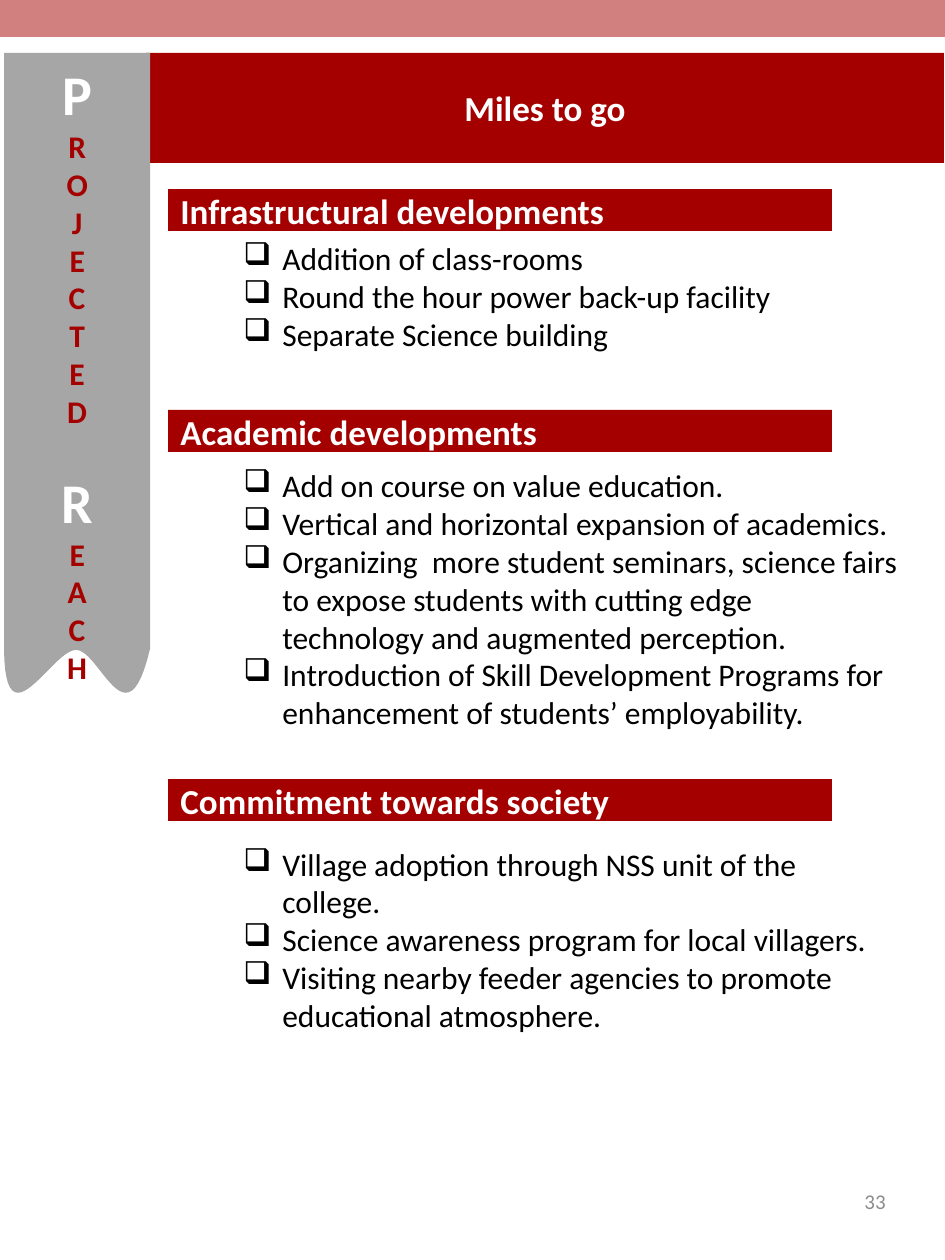
from dataclasses import dataclass
from pptx import Presentation
from pptx.dml.color import RGBColor
from pptx.enum.shapes import MSO_SHAPE as Shape
from pptx.enum.text import MSO_ANCHOR as Anchor, MSO_AUTO_SIZE as Fit, PP_ALIGN as Align
from pptx.oxml.ns import qn
from pptx.util import Emu, Pt
from lxml.etree import SubElement


@dataclass(frozen=True)
class Theme:
    font: str = "Calibri"
    red: str = "A40000"
    gray: str = "A6A6A6"
    white: str = "FFFFFF"
    black: str = "000000"
    faint: str = "8C8C8C"
    cap: int = 32
    head: int = 20
    body: int = 18
    note: int = 12


def px(n):
    return Emu(round(n * 914400 / 126))


def curve(a, b, c, d, steps=24):
    for i in range(1, steps + 1):
        t = i / steps
        u = 1 - t
        yield tuple(u**3 * p + 3 * u * u * t * q + 3 * u * t * t * r + t**3 * s
                    for p, q, r, s in zip(a, b, c, d))


def write(par, text, size, color, bold=False, align=None, font=Theme.font):
    if align is not None:
        par.alignment = align
    run = par.add_run()
    run.text = text
    run.font.name = font
    run.font.size = Pt(size)
    run.font.bold = bold
    run.font.color.rgb = RGBColor.from_string(color)


class Deck:
    def __init__(self, theme, wide, high):
        self.theme = theme
        self.file = Presentation()
        self.file.slide_width, self.file.slide_height = px(wide), px(high)
        self.slide = self.file.slides.add_slide(self.file.slide_layouts[5])

    def paint(self, shape, color, alpha=None):
        shape.fill.solid()
        shape.fill.fore_color.rgb = RGBColor.from_string(color)
        shape.line.fill.background()
        if alpha is not None:
            tint = shape.fill._xPr.find(".//" + qn("a:srgbClr"))
            SubElement(tint, qn("a:alpha")).set("val", str(alpha * 1000))

    def title(self, text, *box):
        head = self.slide.shapes.title
        head.left, head.top, head.width, head.height = map(px, box)
        self.paint(head, self.theme.red)
        frame = head.text_frame
        frame.auto_size = Fit.NONE
        frame.vertical_anchor = Anchor.MIDDLE
        write(frame.paragraphs[0], text, self.theme.head, self.theme.white,
              bold=True, align=Align.CENTER)

    def bar(self, *box, color, alpha=None, text=None):
        bar = self.slide.shapes.add_shape(Shape.RECTANGLE, *map(px, box))
        bar.shadow.inherit = False
        self.paint(bar, color, alpha)
        if text:
            bar.text_frame.vertical_anchor = Anchor.MIDDLE
            write(bar.text_frame.paragraphs[0], text, self.theme.head,
                  self.theme.white, bold=True, align=Align.LEFT)

    def ribbon(self, words, left, top, right, tail):
        mid = (76, tail + 1)
        edge = [(right, top), (right, tail),
                *curve((right, tail), (127, 747), (100, 650), mid),
                *curve(mid, (52, 650), (5, 747), (left, tail))]
        pen = self.slide.shapes.build_freeform(px(left), px(top))
        pen.add_line_segments([(px(x), px(y)) for x, y in edge])
        shape = pen.convert_to_shape()
        shape.shadow.inherit = False
        self.paint(shape, self.theme.gray)
        frame = shape.text_frame
        frame.vertical_anchor = Anchor.MIDDLE
        frame._txBody.bodyPr.set("vert", "wordArtVert")
        par = frame.paragraphs[0]
        for word in words:
            write(par, word[0], self.theme.cap, self.theme.white,
                  bold=True, align=Align.CENTER)
            write(par, word[1:], self.theme.body, self.theme.red, bold=True)

    def frame(self, *box):
        frame = self.slide.shapes.add_textbox(*map(px, box)).text_frame
        frame.word_wrap = True
        return frame

    def bullets(self, groups, *box, gap):
        frame = self.frame(*box)
        par = frame.paragraphs[0]
        for g, group in enumerate(groups):
            for i, text in enumerate(group):
                if g or i:
                    par = frame.add_paragraph()
                par.level = 1
                props = par._p.get_or_add_pPr()
                props.set("marL", str(px(102)))
                props.set("indent", str(-px(39)))
                SubElement(props, qn("a:buChar")).set("char", "❑")
                if g and not i:
                    par.space_before = Pt(gap)
                write(par, text, self.theme.body, self.theme.black)

    def number(self, text, *box):
        frame = self.frame(*box)
        frame.vertical_anchor = Anchor.MIDDLE
        write(frame.paragraphs[0], text, self.theme.note, self.theme.faint,
              align=Align.RIGHT)


PLANS = [
    ("Infrastructural developments", 189, [
        "Addition of class-rooms",
        "Round the hour power back-up facility",
        "Separate Science building"]),
    ("Academic developments", 410, [
        "Add on course on value education.",
        "Vertical and horizontal expansion of academics.",
        "Organizing  more student seminars, science fairs to expose students "
        "with cutting edge technology and augmented perception.",
        "Introduction of Skill Development Programs for enhancement of "
        "students’ employability."]),
    ("Commitment towards society", 779, [
        "Village adoption through NSS unit of the college.",
        "Science awareness program for local villagers.",
        "Visiting nearby feeder agencies to promote educational atmosphere."]),
]


def main():
    theme = Theme()
    deck = Deck(theme, 945, 1260)
    deck.bar(-2, -2, 947, 39, color=theme.red, alpha=50)
    deck.title("Miles to go", 146, 53, 798, 110)
    deck.ribbon(["PROJECTED ", "REACH"], 4, 53, 150, 649)
    deck.number("33", 678, 1168, 220, 67)
    deck.bullets([items for _, _, items in PLANS], 168, 233, 746, 853, gap=65)
    for name, top, _ in PLANS:
        deck.bar(168, top, 664, 42, color=theme.red, text=name)
    deck.file.save("out.pptx")


if __name__ == "__main__":
    main()
